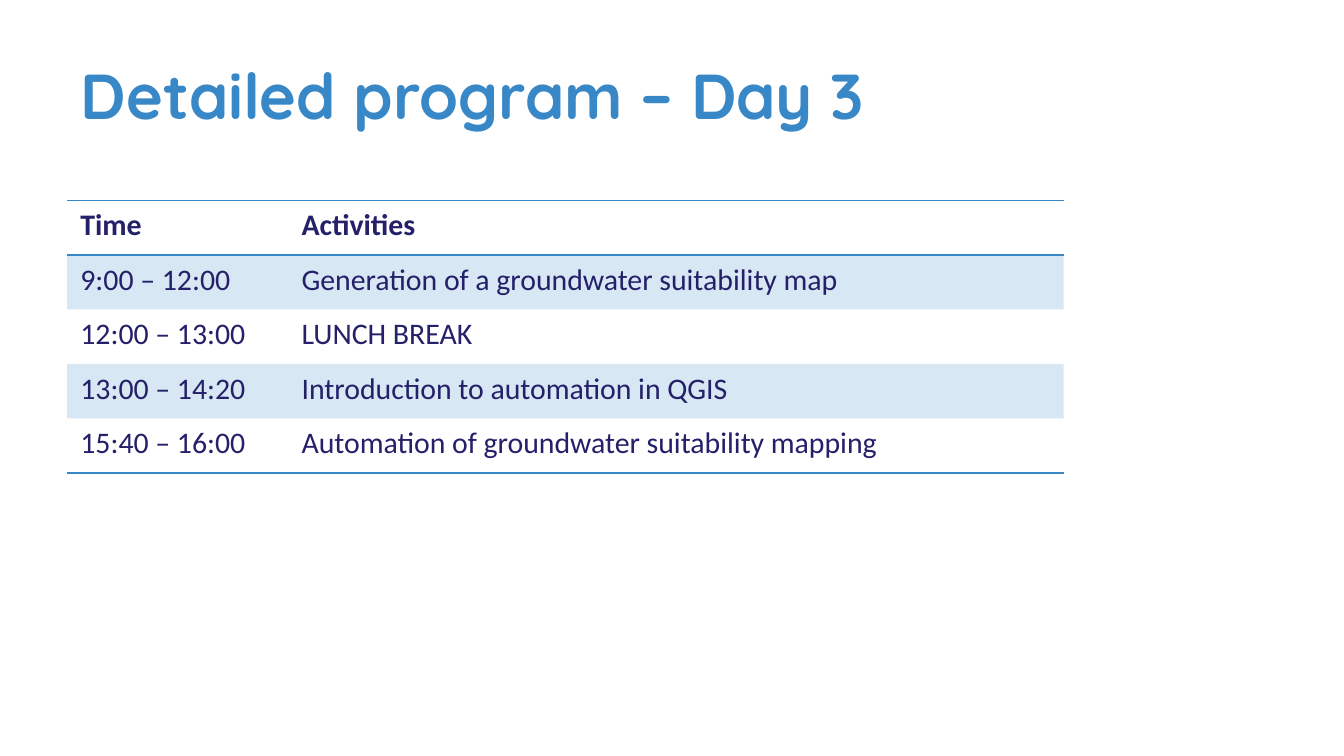
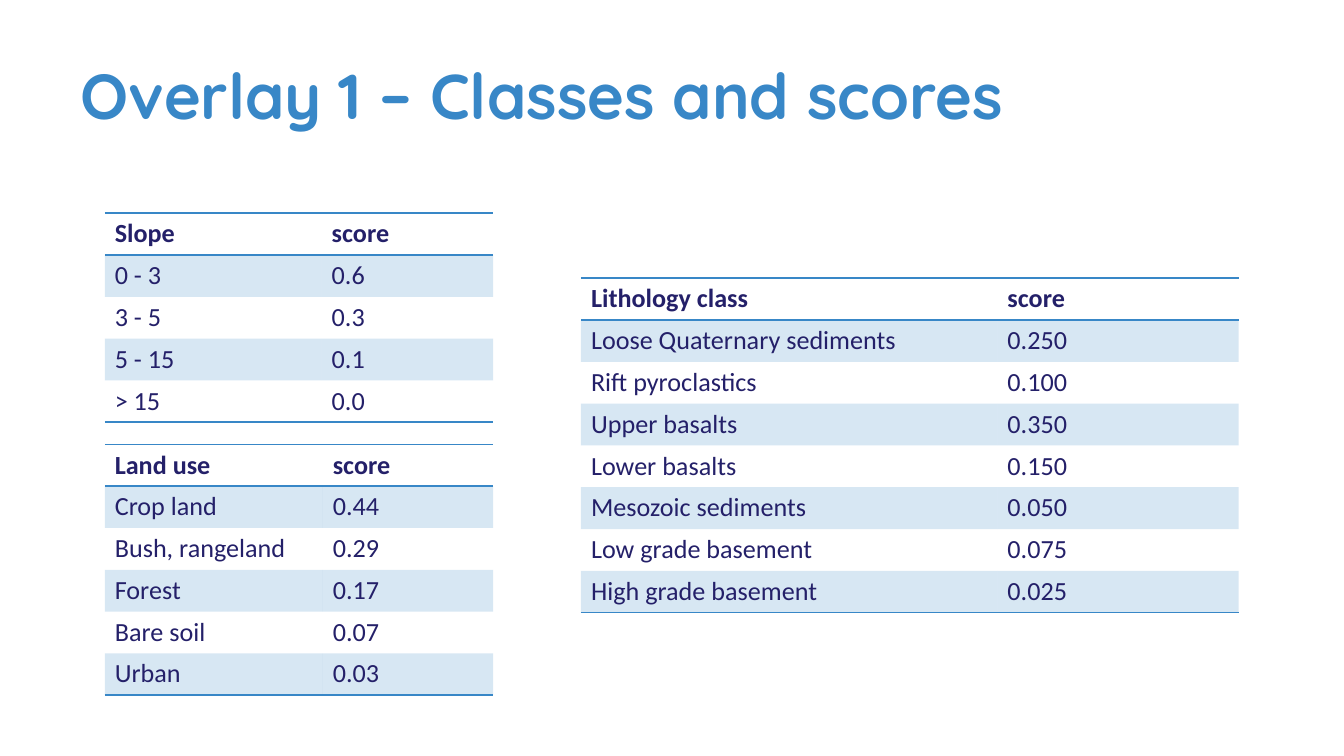
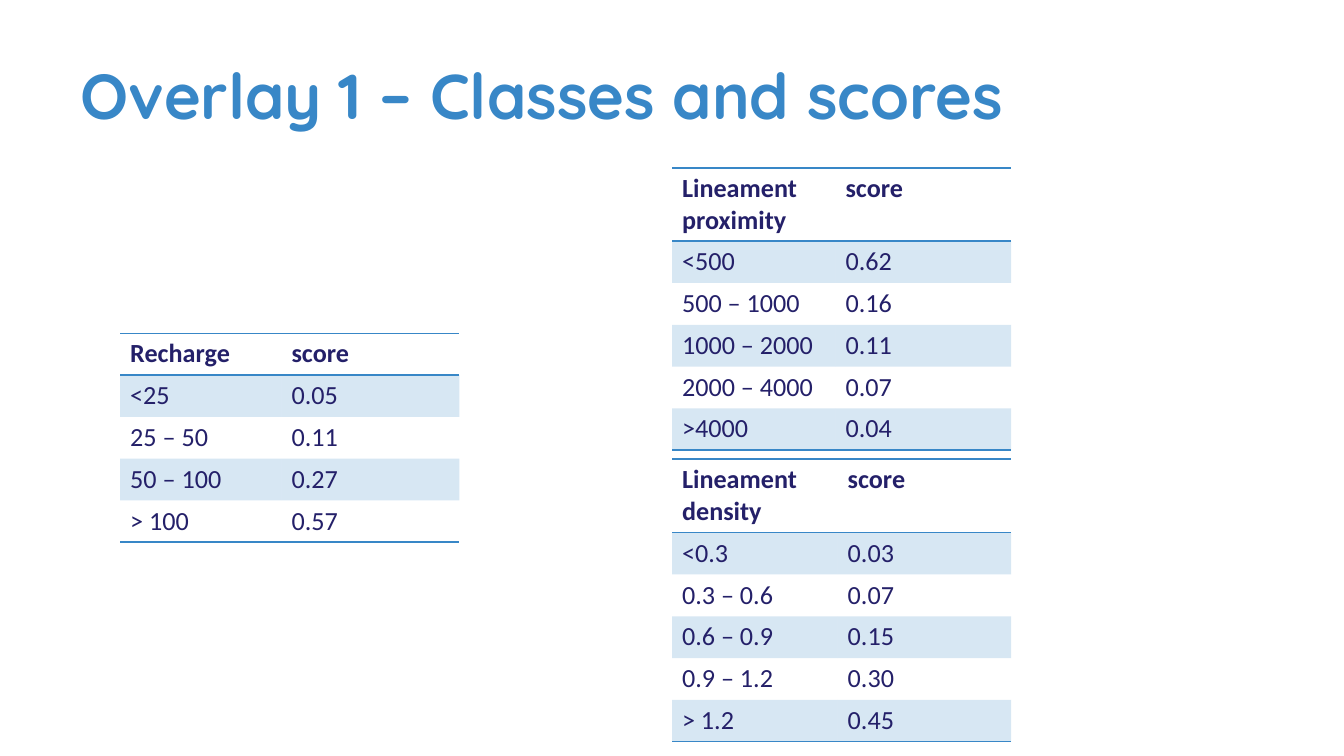
from lxml import etree
from pptx import Presentation
from pptx import util as u
from pptx.dml.color import RGBColor
from pptx.enum import text
from pptx.oxml.ns import qn

Cm = u.Cm
BLUE, NAVY = "3887C7", "242069"
HEAD, BODY = "Quicksand", "Calibri"
PLAIN = "{2D5ABB26-0587-4C30-8999-92F81FD0307C}"  # no style, no grid
ROW, TALL = 0.79, 1.39  # height of one-line and two-line rows
SCORES = "Overlay 1 – Classes and scores"


def color(code):
    return RGBColor.from_string(code)


def write(para, words, face, size, code, bold):
    run = para.add_run()
    run.text = words
    font = run.font
    font.name, font.size, font.bold = face, u.Pt(size), bold
    font.color.rgb = color(code)


def add_slide(deck, title):
    slide = deck.slides.add_slide(deck.slide_layouts[5])
    box = slide.shapes.title
    box.left, box.top, box.width, box.height = Cm(1.27), Cm(0.58), Cm(18.82), Cm(2.39)
    frame = box.text_frame
    frame.word_wrap = True
    frame.auto_size = text.MSO_AUTO_SIZE.NONE
    frame.vertical_anchor = text.MSO_ANCHOR.MIDDLE
    para = frame.paragraphs[0]
    para.alignment = text.PP_ALIGN.LEFT
    write(para, title, HEAD, 34, BLUE, True)
    return slide


def tint(cell):
    """Fill a cell with blue at 20 % opacity."""
    cell.fill.solid()
    cell.fill.fore_color.rgb = color(BLUE)
    paint = cell._tc.tcPr.find(".//" + qn("a:srgbClr"))
    etree.SubElement(paint, qn("a:alpha"), val="20000")


def rule(cell, sides):
    """Draw 1 pt blue borders; they must come before the fill."""
    props = cell._tc.get_or_add_tcPr()
    for spot, side in enumerate(sides):
        line = etree.Element(qn("a:ln" + side), w=str(u.Pt(1)))
        fill = etree.SubElement(line, qn("a:solidFill"))
        etree.SubElement(fill, qn("a:srgbClr"), val=BLUE)
        props.insert(spot, line)


def add_grid(slide, left, top, widths, rows, size=14, high=ROW, first=ROW, pad=(0.19, 0.09)):
    highs = [first] + [high] * (len(rows) - 1)
    grid = slide.shapes.add_table(len(rows), len(widths), Cm(left), Cm(top),
                                  Cm(sum(widths)), Cm(sum(highs))).table
    grid.horz_banding = False
    grid._tbl.tblPr.find(qn("a:tableStyleId")).text = PLAIN
    for col, width in zip(grid.columns, widths):
        col.width = Cm(width)
    for i, (row, tall) in enumerate(zip(rows, highs)):
        grid.rows[i].height = Cm(tall)
        for j, words in enumerate(row):
            cell = grid.cell(i, j)
            cell.margin_left = cell.margin_right = Cm(pad[0])
            cell.margin_top = cell.margin_bottom = Cm(pad[1])
            write(cell.text_frame.paragraphs[0], words, BODY, size, NAVY, i == 0)
            if i % 2:
                tint(cell)
            else:
                cell.fill.background()
            if i == 0:
                rule(cell, "TB")
            elif i == len(rows) - 1:
                rule(cell, "B")


def main():
    deck = Presentation()
    deck.slide_width, deck.slide_height = Cm(25.4), Cm(14.29)

    # Program of the day
    slide = add_slide(deck, "Detailed program – Day 3")
    add_grid(slide, 1.27, 3.79, (4.18, 14.65), [
        ("Time", "Activities"),
        ("9:00 – 12:00", "Generation of a groundwater suitability map"),
        ("12:00 – 13:00", "LUNCH BREAK"),
        ("13:00 – 14:20", "Introduction to automation in QGIS"),
        ("15:40 – 16:00", "Automation of groundwater suitability mapping"),
    ], size=16, high=1.03, first=1.03, pad=(0.25, 0.13))

    # Slope, lithology and land use
    slide = add_slide(deck, SCORES)
    add_grid(slide, 1.98, 4.03, (4.1, 3.24), [
        ("Slope", "score"), ("0 - 3", "0.6"), ("3 - 5", "0.3"),
        ("5 - 15", "0.1"), ("> 15", "0.0"),
    ])
    add_grid(slide, 10.98, 5.26, (7.87, 4.56), [
        ("Lithology class", "score"),
        ("Loose Quaternary sediments", "0.250"),
        ("Rift pyroclastics", "0.100"),
        ("Upper basalts", "0.350"),
        ("Lower basalts", "0.150"),
        ("Mesozoic sediments", "0.050"),
        ("Low grade basement", "0.075"),
        ("High grade basement", "0.025"),
    ])
    add_grid(slide, 1.98, 8.4, (4.12, 3.22), [
        ("Land use", "score"), ("Crop land", "0.44"),
        ("Bush, rangeland", "0.29"), ("Forest", "0.17"),
        ("Bare soil", "0.07"), ("Urban", "0.03"),
    ])

    # Lineaments and recharge
    slide = add_slide(deck, SCORES)
    add_grid(slide, 12.7, 8.68, (3.13, 3.28), [
        ("Lineament density", "score"), ("<0.3", "0.03"),
        ("0.3 – 0.6", "0.07"), ("0.6 – 0.9", "0.15"),
        ("0.9 – 1.2", "0.30"), ("> 1.2", "0.45"),
    ], first=TALL)
    add_grid(slide, 12.7, 3.17, (3.09, 3.32), [
        ("Lineament proximity", "score"), ("<500", "0.62"),
        ("500 – 1000", "0.16"), ("1000 – 2000", "0.11"),
        ("2000 – 4000", "0.07"), (">4000", "0.04"),
    ], first=TALL)
    add_grid(slide, 2.27, 6.3, (3.05, 3.36), [
        ("Recharge", "score"), ("<25", "0.05"), ("25 – 50", "0.11"),
        ("50 – 100", "0.27"), ("> 100", "0.57"),
    ])

    deck.save("out.pptx")


if __name__ == "__main__":
    main()
